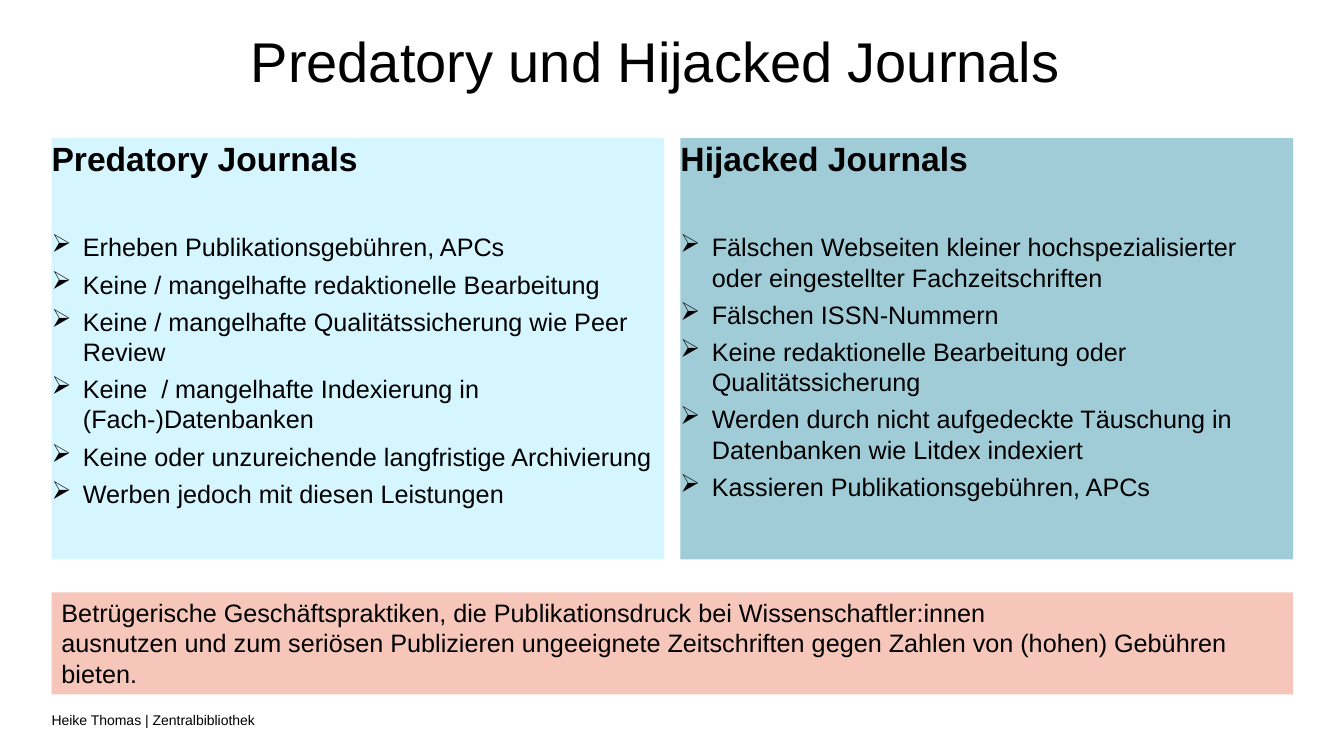
from dataclasses import dataclass

from lxml.etree import SubElement
from pptx import Presentation
from pptx.dml.color import RGBColor
from pptx.enum.shapes import MSO_SHAPE
from pptx.enum.text import MSO_ANCHOR, MSO_AUTO_SIZE, PP_ALIGN
from pptx.oxml.ns import qn
from pptx.shapes.autoshape import Shape
from pptx.slide import Slide
from pptx.text.text import TextFrame
from pptx.util import Cm, Pt

BLACK = RGBColor(0x00, 0x00, 0x00)
PALE_BLUE = RGBColor(0xD5, 0xF6, 0xFF)
TEAL = RGBColor(0xA0, 0xCC, 0xD7)
SALMON = RGBColor(0xF5, 0xC6, 0xB9)

FONT = "Arial"
MARGIN = Cm(1.3)
CONTENT_WIDTH = Cm(31.29)
COLUMN_GAP = Cm(0.41)
COLUMN_WIDTH = (CONTENT_WIDTH - COLUMN_GAP) // 2
COLUMN_TOP = Cm(3.48)
COLUMN_HEIGHT = Cm(10.62)
BULLET_INDENT = Cm(0.79)
ITEM_SPACING = Pt(5)
HEADING_GAP = Pt(38)


@dataclass(frozen=True)
class JournalKind:
    heading: str
    fill: RGBColor
    traits: tuple[str, ...]


JOURNAL_KINDS = (
    JournalKind("Predatory Journals", PALE_BLUE, (
        "Erheben Publikationsgebühren, APCs",
        "Keine / mangelhafte redaktionelle Bearbeitung",
        "Keine / mangelhafte Qualitätssicherung wie Peer Review",
        "Keine  / mangelhafte Indexierung in (Fach-)Datenbanken",
        "Keine oder unzureichende langfristige Archivierung",
        "Werben jedoch mit diesen Leistungen",
    )),
    JournalKind("Hijacked Journals", TEAL, (
        "Fälschen Webseiten kleiner hochspezialisierter oder eingestellter Fachzeitschriften",
        "Fälschen ISSN-Nummern",
        "Keine redaktionelle Bearbeitung oder Qualitätssicherung",
        "Werden durch nicht aufgedeckte Täuschung in Datenbanken wie Litdex indexiert",
        "Kassieren Publikationsgebühren, APCs",
    )),
)

CONCLUSION = (
    "Betrügerische Geschäftspraktiken, die Publikationsdruck bei Wissenschaftler:innen",
    "ausnutzen und zum seriösen Publizieren ungeeignete Zeitschriften gegen Zahlen "
    "von (hohen) Gebühren bieten.",
)


def prepare_frame(frame: TextFrame, anchor: MSO_ANCHOR = MSO_ANCHOR.TOP) -> None:
    frame.word_wrap = True
    frame.auto_size = MSO_AUTO_SIZE.NONE
    frame.vertical_anchor = anchor
    frame.margin_left = frame.margin_right = 0
    frame.margin_top = frame.margin_bottom = 0


def write_lines(frame: TextFrame, lines: tuple[str, ...], size: int) -> None:
    frame.text = "\n".join(lines)
    for line in frame.paragraphs:
        line.alignment = PP_ALIGN.LEFT
        line.font.name = FONT
        line.font.size = Pt(size)
        line.font.bold = False
        line.font.color.rgb = BLACK


def add_panel(slide: Slide, left: int, top: int, width: int, height: int,
              fill: RGBColor) -> Shape:
    panel = slide.shapes.add_shape(MSO_SHAPE.RECTANGLE, left, top, width, height)
    panel.shadow.inherit = False
    panel.fill.solid()
    panel.fill.fore_color.rgb = fill
    panel.line.fill.background()
    panel.text_frame.word_wrap = True
    panel.text_frame.vertical_anchor = MSO_ANCHOR.TOP
    return panel


def add_journal_kind(slide: Slide, kind: JournalKind, left: int) -> None:
    frame = add_panel(slide, left, COLUMN_TOP, COLUMN_WIDTH, COLUMN_HEIGHT,
                      kind.fill).text_frame
    prepare_frame(frame)
    write_lines(frame, (kind.heading, *kind.traits), 18)
    heading, *traits = frame.paragraphs
    heading.font.size = Pt(24)
    heading.font.bold = True
    heading.space_before = ITEM_SPACING
    for index, trait in enumerate(traits):
        trait.space_before = ITEM_SPACING if index else HEADING_GAP
        properties = trait._p.get_or_add_pPr()
        properties.set("marL", str(BULLET_INDENT))
        properties.set("indent", str(-BULLET_INDENT))
        bullet = SubElement(properties, qn("a:buChar"), char="➢")
        properties.find(qn("a:defRPr")).addprevious(bullet)


def main() -> None:
    presentation = Presentation()
    presentation.slide_width = Cm(33.87)
    presentation.slide_height = Cm(19.05)
    slide = presentation.slides.add_slide(presentation.slide_layouts[5])

    title = slide.shapes.title
    title.left, title.top = Cm(6.32), Cm(0.66)
    title.width, title.height = Cm(21.18), Cm(1.19)
    prepare_frame(title.text_frame)
    write_lines(title.text_frame, ("Predatory und Hijacked Journals",), 40)

    for column, kind in enumerate(JOURNAL_KINDS):
        add_journal_kind(slide, kind, MARGIN + column * (COLUMN_WIDTH + COLUMN_GAP))

    conclusion = add_panel(slide, MARGIN, Cm(14.93), CONTENT_WIDTH, Cm(2.57), SALMON)
    write_lines(conclusion.text_frame, CONCLUSION, 18)

    author = slide.shapes.add_textbox(MARGIN, Cm(17.75), Cm(27.36), Cm(0.79))
    prepare_frame(author.text_frame, MSO_ANCHOR.MIDDLE)
    write_lines(author.text_frame, ("Heike Thomas | Zentralbibliothek",), 10)

    presentation.save("out.pptx")


if __name__ == "__main__":
    main()
